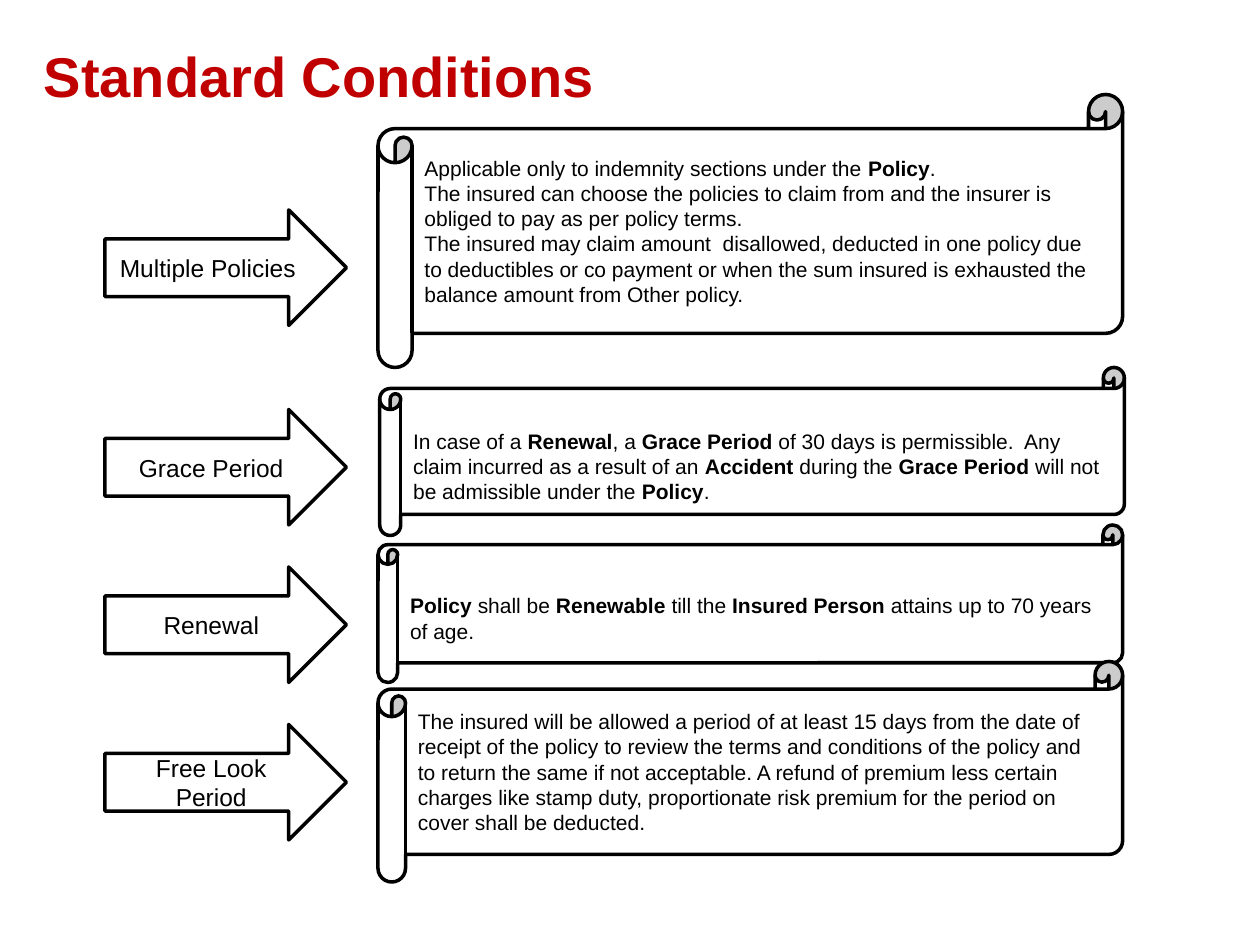
"""Build the Standard Conditions slide: four labelled arrows, each beside a scroll."""
from pptx import Presentation
from pptx.dml.color import RGBColor
from pptx.enum.shapes import MSO_SHAPE
from pptx.enum.text import MSO_ANCHOR, PP_ALIGN
from pptx.util import Pt

TITLE = "Standard Conditions"
CONDITIONS = [
    {"label": "Multiple Policies ", "arrow_top": 120, "scroll": (216, 54, 156), "inset": 3.6,
     "text": ["Applicable only to indemnity sections under the **Policy**.",
              "The insured can choose the policies to claim from and the insurer is "
              "obliged to pay as per policy terms.",
              "The insured may claim amount  disallowed, deducted in one policy due to "
              "deductibles or co payment or when the sum insured is exhausted the "
              "balance amount from Other policy."]},
    {"label": "Grace Period", "arrow_top": 234, "scroll": (217, 210, 96), "inset": 20,
     "text": ["In case of a **Renewal**, a **Grace Period **of 30 days is permissible.  "
              "Any claim incurred as a result of an **Accident **during the "
              "**Grace Period **will not be admissible under the **Policy**."]},
    {"label": "Renewal", "arrow_top": 324, "scroll": (216, 300, 90), "inset": 20,
     "text": ["**Policy **shall be **Renewable **till the **Insured Person **"
              "attains up to 70 years of age."]},
    {"label": "Free Look Period", "arrow_top": 414, "scroll": (216, 378, 126), "inset": 3.6,
     "text": ["The insured will be allowed a period of at least 15 days from the date of "
              "receipt of the policy to review the terms and conditions of the policy and "
              "to return the same if not acceptable. A refund of premium less certain "
              "charges like stamp duty, proportionate risk premium for the period on "
              "cover shall be deducted."]},
]
COLORS = {"title": "C00000", "ink": "000000", "paper": "FFFFFF"}
ARROW_LEFT, ARROW_WIDTH, ARROW_HEIGHT = 60, 138, 66
SCROLL_WIDTH = 425.5


def color(name):
    return RGBColor.from_string(COLORS[name])


def write_text(shape, lines, size, alignment, ink="ink", all_bold=False):
    frame = shape.text_frame
    frame.word_wrap = True
    frame.vertical_anchor = MSO_ANCHOR.MIDDLE
    for index, line in enumerate(lines):
        paragraph = frame.paragraphs[0] if index == 0 else frame.add_paragraph()
        paragraph.alignment = alignment
        for position, part in enumerate(line.split("**")):
            if part:
                run = paragraph.add_run()
                run.text = part
                run.font.name = "Arial"
                run.font.size = Pt(size)
                run.font.bold = all_bold or position % 2 == 1
                run.font.color.rgb = color(ink)


def add_outlined(slide, kind, left, top, width, height):
    shape = slide.shapes.add_shape(kind, Pt(left), Pt(top), Pt(width), Pt(height))
    shape.shadow.inherit = False
    shape.fill.solid()
    shape.fill.fore_color.rgb = color("paper")
    shape.line.color.rgb = color("ink")
    shape.line.width = Pt(2)
    return shape


def main():
    presentation = Presentation()
    presentation.slide_width, presentation.slide_height = Pt(720), Pt(540)
    slide = presentation.slides.add_slide(presentation.slide_layouts[6])

    title = slide.shapes.add_textbox(Pt(0), Pt(14.4), Pt(720), Pt(57.6))
    title.text_frame.margin_left = Pt(25)
    write_text(title, [TITLE], 32, PP_ALIGN.LEFT, "title", True)

    for condition in CONDITIONS:
        arrow = add_outlined(slide, MSO_SHAPE.RIGHT_ARROW, ARROW_LEFT,
                             condition["arrow_top"], ARROW_WIDTH, ARROW_HEIGHT)
        write_text(arrow, [condition["label"]], 14, PP_ALIGN.CENTER)
        left, top, height = condition["scroll"]
        scroll = add_outlined(slide, MSO_SHAPE.HORIZONTAL_SCROLL, left, top,
                              SCROLL_WIDTH, height)
        scroll.text_frame.margin_top = Pt(condition["inset"])
        write_text(scroll, condition["text"], 12, PP_ALIGN.LEFT)

    presentation.save("out.pptx")


if __name__ == "__main__":
    main()
